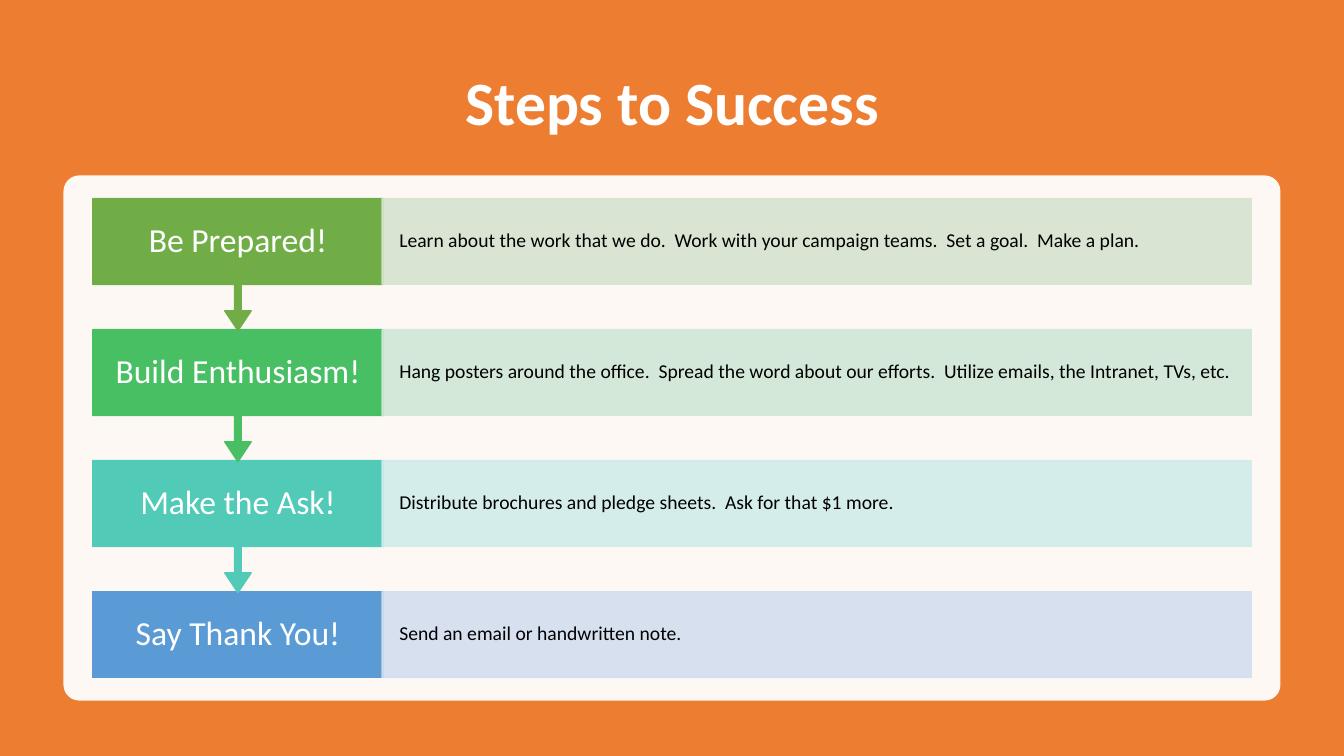
from dataclasses import dataclass

from lxml import etree
from pptx import Presentation
from pptx import util as u
from pptx.dml.color import RGBColor
from pptx.enum import shapes, text
from pptx.oxml import ns

FONT = "Calibri"
ORANGE = RGBColor(0xED, 0x7D, 0x31)
WHITE = RGBColor(0xFF, 0xFF, 0xFF)
BLACK = RGBColor(0x00, 0x00, 0x00)
GREEN = RGBColor(0x70, 0xAD, 0x47)
PALE_GREEN = RGBColor(0xD5, 0xE3, 0xCF)
EMERALD = RGBColor(0x49, 0xBF, 0x64)
PALE_EMERALD = RGBColor(0xD0, 0xE7, 0xD8)
TEAL = RGBColor(0x52, 0xCA, 0xB8)
PALE_TEAL = RGBColor(0xD0, 0xEC, 0xEA)
BLUE = RGBColor(0x5B, 0x9B, 0xD5)
PALE_BLUE = RGBColor(0xD2, 0xDE, 0xEF)

SLIDE_WIDTH, SLIDE_HEIGHT = 13.33, 7.5
STEP_LEFT, STEP_TOP, STEP_PITCH = 0.92, 1.97, 1.3
STEP_WIDTH, STEP_HEIGHT, CALLOUT_HEIGHT = 2.88, 0.85, 1.31
DETAIL_LEFT, DETAIL_WIDTH = 3.79, 8.62
CALLOUT_ADJUSTMENTS = (0.05, 0.1, 0.15, 0.65)


@dataclass
class Step:
    name: str
    detail: str
    color: RGBColor
    pale: RGBColor


@dataclass
class TextStyle:
    size: float
    color: RGBColor
    align: text.PP_ALIGN
    side_inset: float
    end_inset: float
    bold: bool = False


TITLE_STYLE = TextStyle(44, WHITE, text.PP_ALIGN.CENTER, 0.1, 0.05, True)
NAME_STYLE = TextStyle(24, WHITE, text.PP_ALIGN.CENTER, 0.2, 0.19)
DETAIL_STYLE = TextStyle(14, BLACK, text.PP_ALIGN.LEFT, 0.17, 0.19)

STEPS = [
    Step("Be Prepared!",
         "Learn about the work that we do.  Work with your campaign teams.  "
         "Set a goal.  Make a plan.", GREEN, PALE_GREEN),
    Step("Build Enthusiasm!",
         "Hang posters around the office.  Spread the word about our efforts.  "
         "Utilize emails, the Intranet, TVs, etc.", EMERALD, PALE_EMERALD),
    Step("Make the Ask!",
         "Distribute brochures and pledge sheets.  Ask for that $1 more.",
         TEAL, PALE_TEAL),
    Step("Say Thank You!", "Send an email or handwritten note.", BLUE, PALE_BLUE),
]


def add_box(slide, kind: shapes.MSO_SHAPE, left: float, top: float, width: float,
            height: float, color: RGBColor, opacity: int = 100, outlined: bool = False):
    box = slide.shapes.add_shape(kind, u.Inches(left), u.Inches(top),
                                 u.Inches(width), u.Inches(height))
    box.shadow.inherit = False
    box.fill.solid()
    box.fill.fore_color.rgb = color
    if outlined:
        box.line.color.rgb = color
        box.line.width = u.Pt(1)
    else:
        box.line.fill.background()
    if opacity < 100:
        for tint in box._element.spPr.iter(ns.qn("a:srgbClr")):
            etree.SubElement(tint, ns.qn("a:alpha"), val=str(opacity * 1000))
    return box


def write(box, words: str, style: TextStyle) -> None:
    frame = box.text_frame
    frame.text = words
    frame.word_wrap = True
    frame.vertical_anchor = text.MSO_ANCHOR.MIDDLE
    frame.margin_left = frame.margin_right = u.Inches(style.side_inset)
    frame.margin_top = frame.margin_bottom = u.Inches(style.end_inset)
    para = frame.paragraphs[0]
    para.alignment = style.align
    para.line_spacing = 0.9
    for span in para.runs:
        span.font.name = FONT
        span.font.size = u.Pt(style.size)
        span.font.bold = style.bold
        span.font.color.rgb = style.color


def add_step(slide, step: Step, top: float, is_last: bool) -> None:
    """Draw a step's name, with an arrow to the next step if any, and its detail."""
    if is_last:
        name_box = add_box(slide, shapes.MSO_SHAPE.RECTANGLE, STEP_LEFT, top,
                           STEP_WIDTH, STEP_HEIGHT, step.color, outlined=True)
    else:
        name_box = add_box(slide, shapes.MSO_SHAPE.DOWN_ARROW_CALLOUT, STEP_LEFT, top,
                           STEP_WIDTH, CALLOUT_HEIGHT, step.color, outlined=True)
        for index, value in enumerate(CALLOUT_ADJUSTMENTS):
            name_box.adjustments[index] = value
    write(name_box, step.name, NAME_STYLE)
    detail_box = add_box(slide, shapes.MSO_SHAPE.RECTANGLE, DETAIL_LEFT, top,
                         DETAIL_WIDTH, STEP_HEIGHT, step.pale, 90, outlined=True)
    write(detail_box, step.detail, DETAIL_STYLE)


def main() -> None:
    deck = Presentation()
    deck.slide_width = u.Inches(SLIDE_WIDTH)
    deck.slide_height = u.Inches(SLIDE_HEIGHT)
    slide = deck.slides.add_slide(deck.slide_layouts[6])

    add_box(slide, shapes.MSO_SHAPE.RECTANGLE, 0, 0, SLIDE_WIDTH, SLIDE_HEIGHT, ORANGE)
    title = slide.shapes.add_textbox(u.Inches(0.92), u.Inches(0.5),
                                     u.Inches(11.5), u.Inches(1.1))
    write(title, "Steps to Success", TITLE_STYLE)
    panel = add_box(slide, shapes.MSO_SHAPE.ROUNDED_RECTANGLE,
                    0.63, 1.74, 12.07, 5.21, WHITE, 95)
    panel.adjustments[0] = 0.03

    # Last step first, so that each arrow tip lies over the step below it.
    last = len(STEPS) - 1
    for index, step in reversed(list(enumerate(STEPS))):
        add_step(slide, step, STEP_TOP + index * STEP_PITCH, index == last)

    deck.save("out.pptx")


if __name__ == "__main__":
    main()
